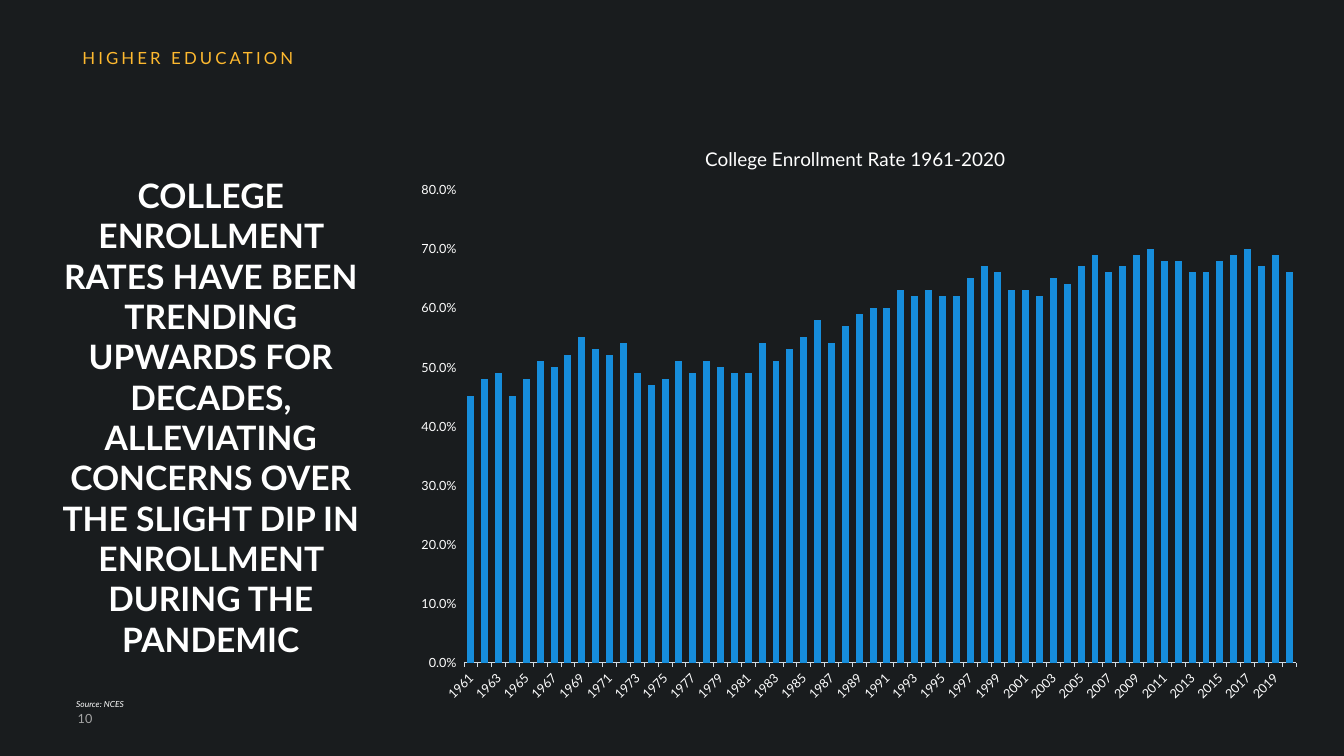
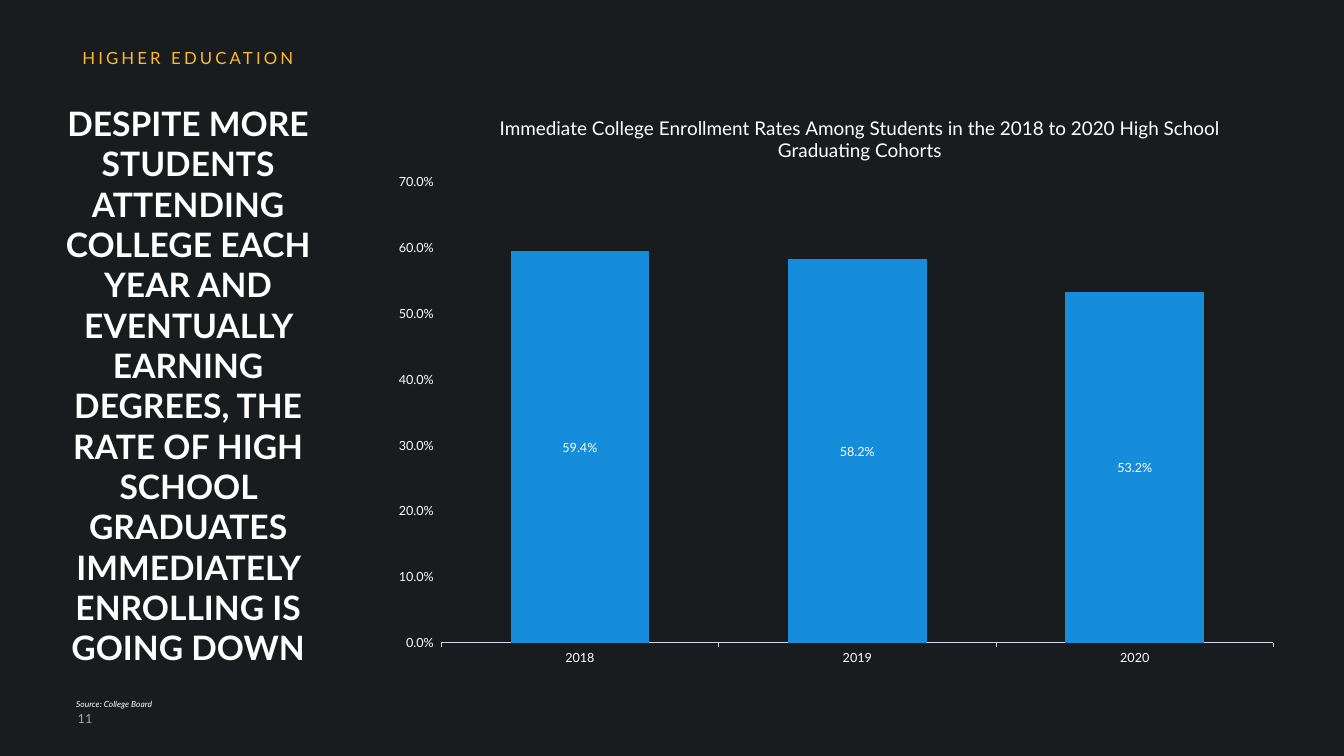
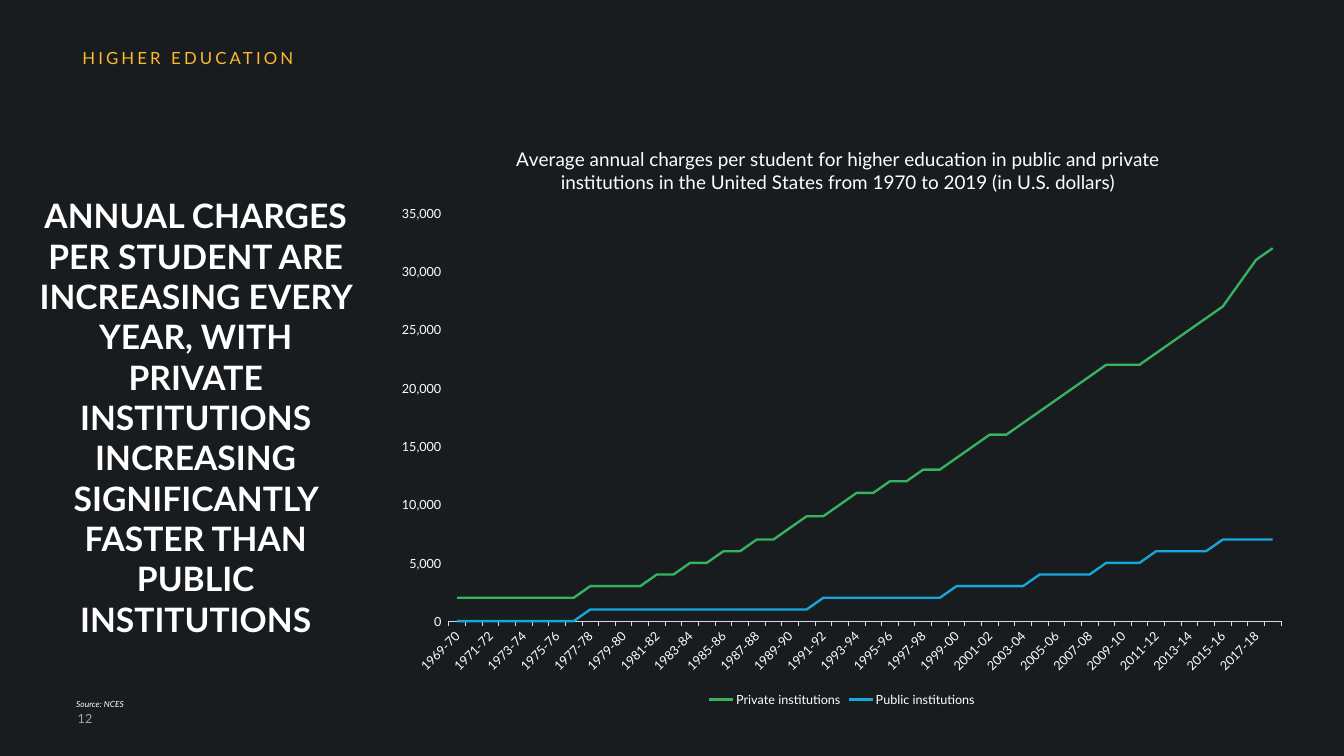
import dataclasses

import lxml.etree
import pptx
import pptx.chart.data
import pptx.dml.color
import pptx.enum.chart
import pptx.enum.text
import pptx.oxml.ns
import pptx.util

qn = pptx.oxml.ns.qn
Inches = pptx.util.Inches
ALIGN = pptx.enum.text.PP_ALIGN
ANCHOR = pptx.enum.text.MSO_ANCHOR
KIND = pptx.enum.chart.XL_CHART_TYPE


@dataclasses.dataclass(frozen=True)
class Theme:
    font: str = "Lato"
    background: str = "191C1E"
    text: str = "FFFFFF"
    accent: str = "FEB92F"
    muted: str = "A6A6A6"
    axis: str = "D2DBE3"
    bar: str = "168DDB"
    private: str = "37B360"
    public: str = "16A7DB"
    headline: int = 32
    chart_title: int = 18
    section: int = 16
    label: int = 12
    source: int = 8


T = Theme()
WIDTH, HEIGHT = 17.78, 10
MARGIN = 0.91
HEADLINE_W, HEADLINE_H = 4.34, 7.89
CHART_W, CHART_H = 12.1, 7.82
CHART_OFFSET = 4.67

ENROLLMENT = [
    45, 48, 49, 45, 48, 51, 50, 52, 55, 53, 52, 54, 49, 47, 48, 51, 49, 51, 50, 49,
    49, 54, 51, 53, 55, 58, 54, 57, 59, 60, 60, 63, 62, 63, 62, 62, 65, 67, 66, 63,
    63, 62, 65, 64, 67, 69, 66, 67, 69, 70, 68, 68, 66, 66, 68, 69, 70, 67, 69, 66,
]
PRIVATE = [
    2, 2, 2, 2, 2, 2, 2, 2, 3, 3, 3, 3, 4, 4, 5, 5, 6, 6, 7, 7, 8, 9, 9, 10, 11,
    11, 12, 12, 13, 13, 14, 15, 16, 16, 17, 18, 19, 20, 21, 22, 22, 22, 23, 24, 25,
    26, 27, 29, 31, 32,
]
PUBLIC = [0] * 8 + [1] * 14 + [2] * 8 + [3] * 5 + [4] * 4 + [5] * 3 + [6] * 4 + [7] * 4


def rgb(color):
    return pptx.dml.color.RGBColor.from_string(color)


def style(font, size, color=T.text, bold=False, italic=False):
    font.name, font.size = T.font, pptx.util.Pt(size)
    font.color.rgb = rgb(color)
    font.bold, font.italic = bold, italic


def write(tf, text, size, color=T.text, bold=False, italic=False,
          align=ALIGN.LEFT, anchor=ANCHOR.TOP, inset=(0.1, 0.05), spacing=0):
    tf.auto_size = pptx.enum.text.MSO_AUTO_SIZE.NONE
    tf.word_wrap = True
    tf.vertical_anchor = anchor
    tf.margin_left = tf.margin_right = Inches(inset[0])
    tf.margin_top = tf.margin_bottom = Inches(inset[1])
    p = tf.paragraphs[0]
    pPr = p._p.get_or_add_pPr()
    pPr.set("marL", "0")
    pPr.set("indent", "0")
    lxml.etree.SubElement(pPr, qn("a:buNone"))
    p.alignment, p.space_before = align, 0
    r = p.add_run()
    r.text = text
    style(r.font, size, color, bold, italic)
    if spacing:
        r._r.get_or_add_rPr().set("spc", str(spacing * 100))


def place(sp, left, top, width, height):
    sp.left, sp.top = Inches(left), Inches(top)
    sp.width, sp.height = Inches(width), Inches(height)


def add_label(s, text, left, top, width, height, size, **fmt):
    box = s.shapes.add_textbox(*map(Inches, (left, top, width, height)))
    write(box.text_frame, text, size, **fmt)


def add_frame(prs, number, headline, source, panel):
    s = prs.slides.add_slide(prs.slide_layouts[1])
    title, section = s.shapes.title, s.placeholders[1]
    place(title, *panel, HEADLINE_W, HEADLINE_H)
    write(title.text_frame, headline, T.headline, bold=True,
          align=ALIGN.CENTER, anchor=ANCHOR.MIDDLE)
    place(section, MARGIN, 0.54, 7.87, 0.45)
    write(section.text_frame, "HIGHER EDUCATION", T.section, color=T.accent,
          anchor=ANCHOR.BOTTOM, inset=(0.18, 0.09), spacing=3)
    add_label(s, source, MARGIN, 9.2, 5.33, 0.24, T.source, italic=True)
    add_label(s, str(number), 0.93, 9.35, 0.72, 0.4, T.label, color=T.muted)
    return s


def set_layout(parent, index, **shares):
    for old in parent.findall(qn("c:layout")):
        parent.remove(old)
    layout = lxml.etree.Element(qn("c:layout"))
    manual = lxml.etree.SubElement(layout, qn("c:manualLayout"))
    if "w" in shares:
        lxml.etree.SubElement(manual, qn("c:layoutTarget")).set("val", "inner")
    for mode in ("xMode", "yMode"):
        lxml.etree.SubElement(manual, qn("c:" + mode)).set("val", "edge")
    for key, value in shares.items():
        lxml.etree.SubElement(manual, qn("c:" + key)).set("val", str(value))
    parent.insert(index, layout)


def format_axes(chart, top, step, number_format, slanted):
    for axis in (chart.category_axis, chart.value_axis):
        axis.has_major_gridlines = False
        axis.major_tick_mark = pptx.enum.chart.XL_TICK_MARK.OUTSIDE
        style(axis.tick_labels.font, T.label)
    line = chart.category_axis.format.line
    line.color.rgb, line.width = rgb(T.axis), pptx.util.Pt(0.75)
    if slanted:
        body = chart.category_axis._element.find(qn("c:txPr")).find(qn("a:bodyPr"))
        body.set("rot", "-2700000")
        body.set("vert", "horz")
    values = chart.value_axis
    values.format.line.fill.background()
    values.minimum_scale, values.maximum_scale, values.major_unit = 0, top, step
    values.tick_labels.number_format = number_format
    values.tick_labels.number_format_is_linked = False


def add_chart(s, panel, kind, title, cats, series, top, step, number_format,
              plot_area, title_x, slanted=True):
    data = pptx.chart.data.CategoryChartData(number_format=number_format)
    data.categories = cats
    for name, values, _ in series:
        data.add_series(name, values)
    box = (panel[0] + CHART_OFFSET, panel[1], CHART_W, CHART_H)
    chart = s.shapes.add_chart(kind, *map(Inches, box), data).chart
    style(chart.font, 10)
    chart.has_legend = False
    chart.has_title = True
    r = chart.chart_title.text_frame.paragraphs[0].add_run()
    r.text = title
    style(r.font, T.chart_title)
    set_layout(chart.chart_title._element, 1, x=title_x, y=0.04)
    set_layout(chart._chartSpace.chart.plotArea, 0, **dict(zip("xywh", plot_area)))
    format_axes(chart, top, step, number_format, slanted)
    plot = chart.plots[0]
    plot.vary_by_categories = False
    for ser, (_, _, color) in zip(plot.series, series):
        if kind == KIND.LINE:
            ser.smooth = False
            ser.format.line.color.rgb = rgb(color)
            ser.format.line.width = pptx.util.Pt(2.25)
        else:
            plot.gap_width = 100
            ser.format.fill.solid()
            ser.format.fill.fore_color.rgb = rgb(color)
    return chart


def add_value_labels(chart, number_format):
    labels = chart.plots[0].series[0].data_labels
    labels.show_value = True
    labels.number_format, labels.number_format_is_linked = number_format, False
    labels.position = pptx.enum.chart.XL_LABEL_POSITION.CENTER
    style(labels.font, T.label)


def add_legend(chart):
    chart.has_legend = True
    chart.legend.position = pptx.enum.chart.XL_LEGEND_POSITION.BOTTOM
    chart.legend.include_in_layout = False
    style(chart.legend.font, T.label)


def enrollment_slide(prs):
    panel = (0.62, 1.57)
    s = add_frame(
        prs, 10, "COLLEGE ENROLLMENT RATES HAVE BEEN TRENDING UPWARDS FOR DECADES, "
        "ALLEVIATING CONCERNS OVER THE SLIGHT DIP IN ENROLLMENT DURING THE PANDEMIC",
        "Source: NCES", panel)
    add_chart(s, panel, KIND.COLUMN_CLUSTERED, "College Enrollment Rate 1961-2020",
              [str(year) for year in range(1961, 2021)],
              [("Series 1", [v / 100 for v in ENROLLMENT], T.bar)],
              0.8, 0.1, "0.0%", (0.07, 0.12, 0.91, 0.8), 0.33)


def cohort_slide(prs):
    panel = (0.32, 1.15)
    s = add_frame(
        prs, 11, "DESPITE MORE STUDENTS ATTENDING COLLEGE EACH YEAR AND EVENTUALLY "
        "EARNING DEGREES, THE RATE OF HIGH SCHOOL GRADUATES IMMEDIATELY ENROLLING "
        "IS GOING DOWN", "Source: College Board", panel)
    chart = add_chart(
        s, panel, KIND.COLUMN_CLUSTERED,
        "Immediate College Enrollment Rates Among Students in the 2018 to 2020 "
        "High School Graduating Cohorts", ["2018", "2019", "2020"],
        [("Series 1", [0.594, 0.582, 0.532], T.bar)],
        0.7, 0.1, "0.0%", (0.07, 0.16, 0.91, 0.78), 0.13, slanted=False)
    add_value_labels(chart, "0.0%")


def charges_slide(prs):
    panel = (0.42, 1.57)
    s = add_frame(
        prs, 12, "ANNUAL CHARGES PER STUDENT ARE INCREASING EVERY YEAR, WITH PRIVATE "
        "INSTITUTIONS INCREASING SIGNIFICANTLY FASTER THAN PUBLIC INSTITUTIONS",
        "Source: NCES", panel)
    chart = add_chart(
        s, panel, KIND.LINE,
        "Average annual charges per student for higher education in public and private "
        "institutions in the United States from 1970 to 2019 (in U.S. dollars)",
        [f"{year}-{(year + 1) % 100:02d}" for year in range(1969, 2019)],
        [("Private institutions", [v * 1000 for v in PRIVATE], T.private),
         ("Public institutions", [v * 1000 for v in PUBLIC], T.public)],
        35000, 5000, "#,##0", (0.07, 0.16, 0.91, 0.69), 0.14)
    add_legend(chart)


def main():
    prs = pptx.Presentation()
    prs.slide_width, prs.slide_height = Inches(WIDTH), Inches(HEIGHT)
    fill = prs.slide_master.background.fill
    fill.solid()
    fill.fore_color.rgb = rgb(T.background)
    enrollment_slide(prs)
    cohort_slide(prs)
    charges_slide(prs)
    prs.save("out.pptx")


if __name__ == "__main__":
    main()
